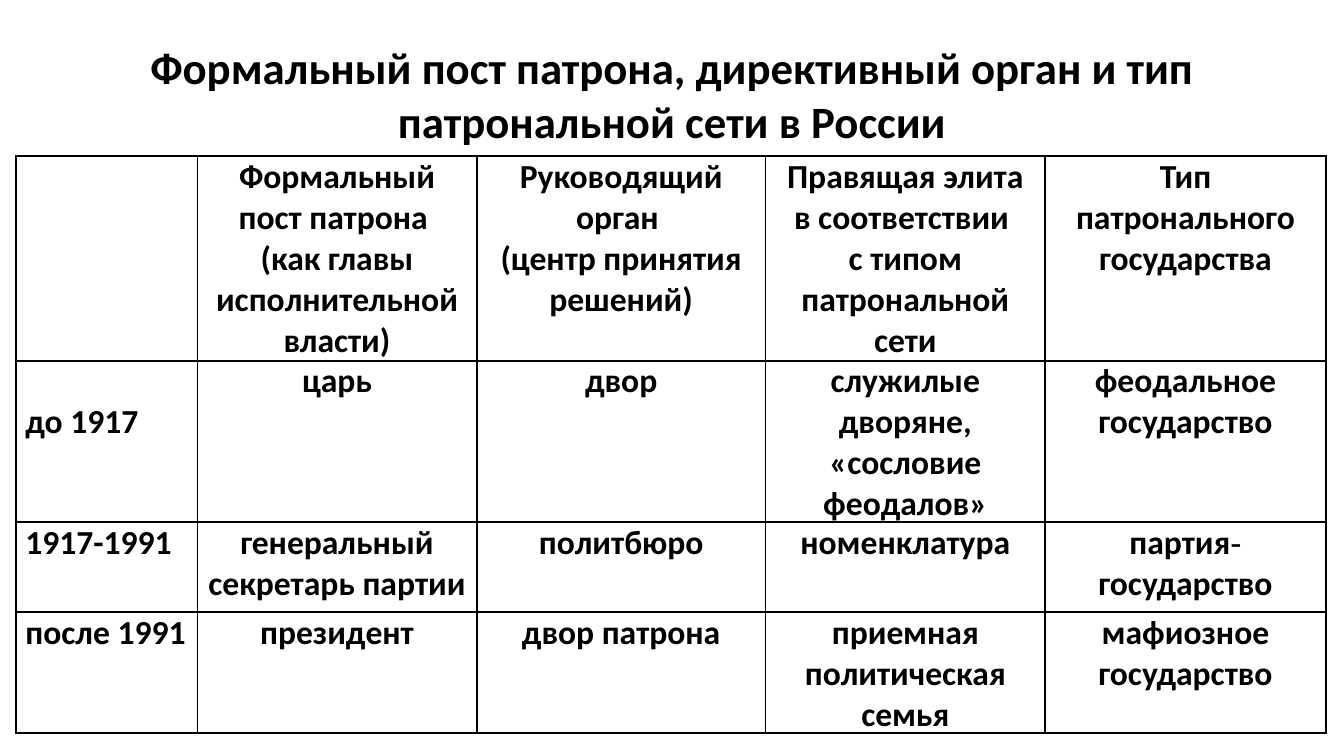
from lxml import etree
from pptx import Presentation
from pptx.dml.color import RGBColor
from pptx.enum.text import MSO_ANCHOR, PP_ALIGN
from pptx.oxml.ns import qn
from pptx.util import Cm, Pt

CENTER = PP_ALIGN.CENTER
JUSTIFY = PP_ALIGN.JUSTIFY
MIDDLE = MSO_ANCHOR.MIDDLE

FONT = "Calibri"
BLACK = "000000"
BLANK_LAYOUT = 6

TITLE = "Формальный пост патрона, директивный oрган и тип патрональной сети в России"
COLUMN_WIDTHS = [3.43, 5.28, 5.46, 5.28, 5.31]
ROW_HEIGHTS = [3.87, 1.93, 1.7, 1.7]
# A line break within a cell starts a new paragraph.
ROWS = [
    ["",
     "Формальный пост патрона \n(как главы исполнительной власти)",
     "Руководящий орган \n(центр принятия решений)",
     "Правящая элита в соответствии \nс типом патрональной сети",
     "Тип пaтрoнaльного государства"],
    ["до 1917", "царь", "двoр",
     "служилые дворяне,\n«сословие феодалов»",
     "феодальное государство"],
    ["1917-1991", "генеральный секретарь партии", "пoлитбюро",
     "нoмeнклaтурa", "партия˗\nгосударство"],
    ["после 1991", "президeнт", "двор пaтрoна",
     "приемная политическая семья", "мафиозное государство"],
]


def color(hex_code):
    return RGBColor.from_string(hex_code)


def write_text(frame, text, size, alignment):
    frame.text = text
    for paragraph in frame.paragraphs:
        paragraph.alignment = alignment
        font = paragraph.font
        font.name = FONT
        font.size = Pt(size)
        font.bold = True
        font.color.rgb = color(BLACK)


def add_title(slide):
    frame = slide.shapes.add_textbox(Cm(1.27), Cm(0.58), Cm(22.86), Cm(2.39)).text_frame
    frame.word_wrap = True
    frame.vertical_anchor = MIDDLE
    write_text(frame, TITLE, 24, CENTER)
    frame.paragraphs[0].space_before = Pt(6)


def set_borders(cell, hex_code, width):
    """Draw all four sides; the schema wants the lines ahead of the fill."""
    properties = cell._tc.get_or_add_tcPr()
    for position, side in enumerate(("a:lnL", "a:lnR", "a:lnT", "a:lnB")):
        line = etree.Element(qn(side), w=str(Pt(width)))
        fill = etree.SubElement(line, qn("a:solidFill"))
        etree.SubElement(fill, qn("a:srgbClr"), val=hex_code)
        properties.insert(position, line)


def format_cell(cell, text, alignment):
    cell.margin_left = cell.margin_right = Cm(0.18)
    cell.margin_top = cell.margin_bottom = Cm(0)
    cell.fill.background()
    set_borders(cell, BLACK, 1)
    write_text(cell.text_frame, text, 18, alignment)


def add_periods_table(slide):
    table = slide.shapes.add_table(
        len(ROWS), len(COLUMN_WIDTHS), Cm(0.3), Cm(2.95),
        Cm(sum(COLUMN_WIDTHS)), Cm(sum(ROW_HEIGHTS))).table
    table.first_row = False
    table.horz_banding = False
    for column, width in zip(table.columns, COLUMN_WIDTHS):
        column.width = Cm(width)
    for row, height, texts in zip(table.rows, ROW_HEIGHTS, ROWS):
        row.height = Cm(height)
        for index, (cell, text) in enumerate(zip(row.cells, texts)):
            format_cell(cell, text, CENTER if index else JUSTIFY)
    # The first period sits one line lower than its row.
    table.cell(1, 0).margin_top = Cm(0.77)


def main():
    presentation = Presentation()
    presentation.slide_width = Cm(25.4)
    presentation.slide_height = Cm(14.29)
    slide = presentation.slides.add_slide(presentation.slide_layouts[BLANK_LAYOUT])
    add_title(slide)
    add_periods_table(slide)
    presentation.save("out.pptx")


if __name__ == "__main__":
    main()
